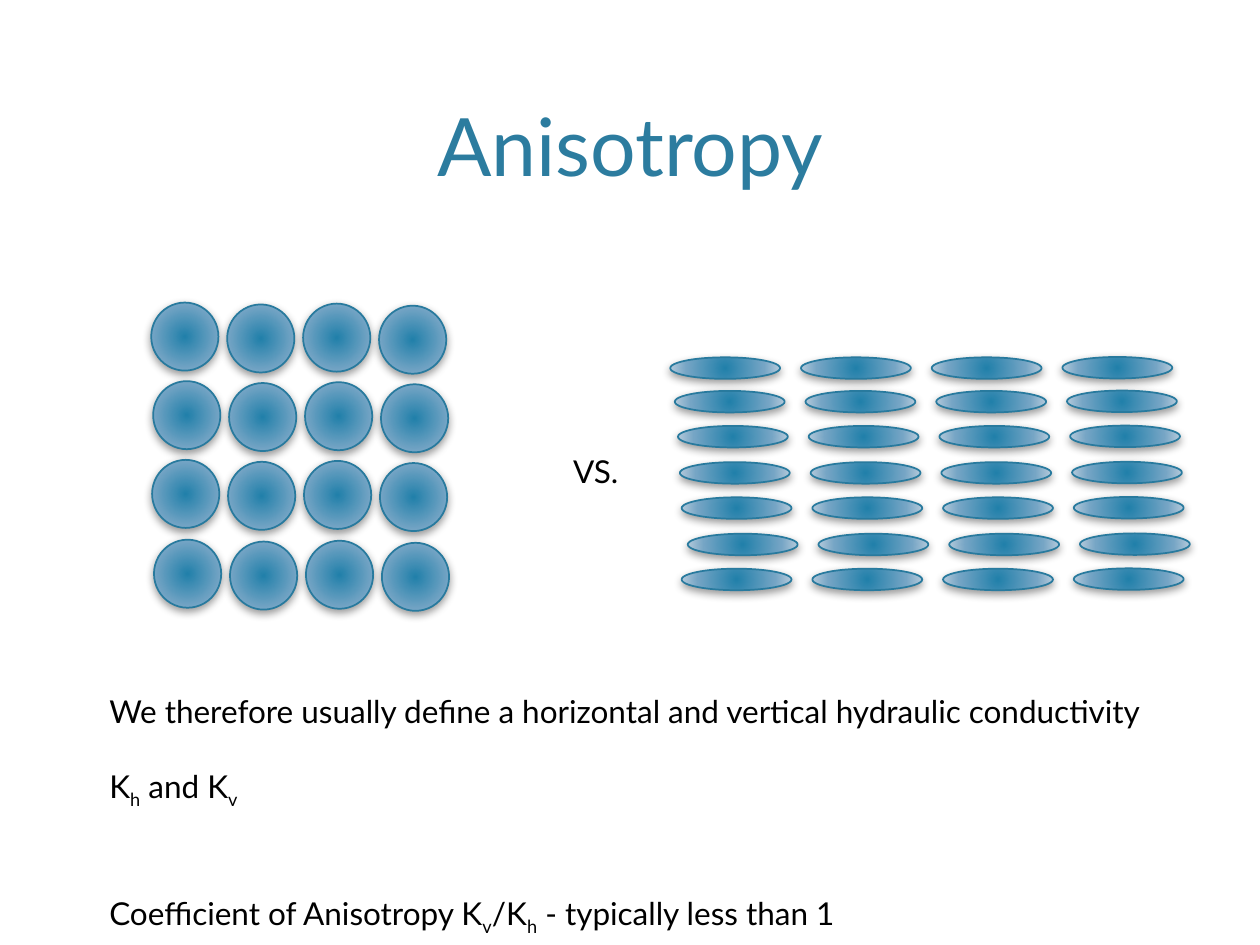
import pptx
import pptx.dml.color
import pptx.enum.shapes
import pptx.enum.text
import pptx.oxml
import pptx.oxml.ns
import pptx.util

Pt = pptx.util.Pt
FONT = "Lato"
COLOURS = {
    "title": "2C7C9F",
    "text": "000000",
    "outline": "287A9E",
    "centre": "2180AA",
    "middle": "75A5C5",
    "edge": "B8CCDC",
    "shadow": "000000",
}
GRADIENT = [(0, "centre"), (69, "middle"), (100, "edge")]
SUBSCRIPT = "-25000"

SPHERE_SIZE = (38.4, 38.9)
SPHERE_STEP = 43.4
SPHERE_ROWS = [(86.4, 172.9), (87.5, 217.8), (86.9, 262.8), (88, 308.4)]
SPHERE_DROPS = [0, 1.1, 0.6, 1.8]

LENS_SIZE = (62.8, 12.3)
LENS_STEP = 74.7
LENS_ROWS = [
    (383, 204.2), (385.6, 223.4), (387.4, 243.4), (388.5, 264.1),
    (389.5, 284.2), (393, 305), (389.5, 325),
]
LENS_DROPS = [0, 0, 0, -0.2]


def colour(name):
    return pptx.dml.color.RGBColor.from_string(COLOURS[name])


def add_gradient(shape):
    stops = "".join(
        f'<a:gs pos="{percent * 1000}"><a:srgbClr val="{COLOURS[name]}"/></a:gs>'
        for percent, name in GRADIENT
    )
    gradient = pptx.oxml.parse_xml(
        f'<a:gradFill {pptx.oxml.ns.nsdecls("a")} rotWithShape="1">'
        f"<a:gsLst>{stops}</a:gsLst>"
        '<a:path path="circle"><a:fillToRect l="100000" t="100000" '
        'r="100000" b="100000"/></a:path></a:gradFill>'
    )
    shape._element.spPr.find(pptx.oxml.ns.qn("a:prstGeom")).addnext(gradient)


def add_shadow(shape):
    shape.shadow.inherit = False
    shadow = pptx.oxml.parse_xml(
        f'<a:outerShdw {pptx.oxml.ns.nsdecls("a")} blurRad="{Pt(5)}" '
        f'dist="{Pt(2)}" dir="5400000" rotWithShape="0">'
        f'<a:srgbClr val="{COLOURS["shadow"]}"><a:alpha val="40000"/>'
        "</a:srgbClr></a:outerShdw>"
    )
    shape._element.spPr.find(pptx.oxml.ns.qn("a:effectLst")).append(shadow)


def add_grain(slide, left, top, size):
    shape = slide.shapes.add_shape(
        pptx.enum.shapes.MSO_SHAPE.OVAL, Pt(left), Pt(top), Pt(size[0]), Pt(size[1])
    )
    shape.line.color.rgb = colour("outline")
    shape.line.width = Pt(1)
    add_gradient(shape)
    add_shadow(shape)


def add_packing(slide, rows, drops, step, size):
    for left, top in rows:
        for column, drop in enumerate(drops):
            add_grain(slide, left + column * step, top + drop, size)


def add_text_box(slide, left, top, width, height, wrap=True):
    box = slide.shapes.add_textbox(Pt(left), Pt(top), Pt(width), Pt(height))
    box.text_frame.word_wrap = wrap
    return box.text_frame


def add_run(paragraph, text, size=18, colour_name="text", subscript=False):
    run = paragraph.add_run()
    run.text = text
    run.font.name = FONT
    run.font.size = Pt(size)
    run.font.color.rgb = colour(colour_name)
    if subscript:
        run.font._element.set("baseline", SUBSCRIPT)


def add_title(slide):
    frame = add_text_box(slide, 43.2, 8.6, 633.6, 105.2)
    frame.vertical_anchor = pptx.enum.text.MSO_ANCHOR.BOTTOM
    paragraph = frame.paragraphs[0]
    paragraph.alignment = pptx.enum.text.PP_ALIGN.CENTER
    add_run(paragraph, "Anisotropy", 46, "title")


def add_conductivity_text(slide):
    frame = add_text_box(slide, 55.4, 391.7, 656, 123.8)
    definition = frame.paragraphs[0]
    add_run(
        definition,
        "We therefore usually define a horizontal and vertical hydraulic conductivity",
    )

    symbols = frame.add_paragraph()
    symbols.space_before = Pt(21.6)
    add_run(symbols, "K")
    add_run(symbols, "h", subscript=True)
    add_run(symbols, " and K")
    add_run(symbols, "v", subscript=True)

    coefficient = frame.add_paragraph()
    coefficient.space_before = Pt(48)
    add_run(coefficient, "Coefficient of Anisotropy K")
    add_run(coefficient, "v", subscript=True)
    add_run(coefficient, "/K")
    add_run(coefficient, "h", subscript=True)
    add_run(coefficient, " - typically less than 1")


def main():
    presentation = pptx.Presentation()
    presentation.slide_width = Pt(720)
    presentation.slide_height = Pt(540)
    slide = presentation.slides.add_slide(presentation.slide_layouts[6])

    add_title(slide)
    add_packing(slide, SPHERE_ROWS, SPHERE_DROPS, SPHERE_STEP, SPHERE_SIZE)
    add_packing(slide, LENS_ROWS, LENS_DROPS, LENS_STEP, LENS_SIZE)
    versus = add_text_box(slide, 320.4, 254.9, 43.2, 28.8, wrap=False)
    add_run(versus.paragraphs[0], "VS.")
    add_conductivity_text(slide)

    presentation.save("out.pptx")


if __name__ == "__main__":
    main()
